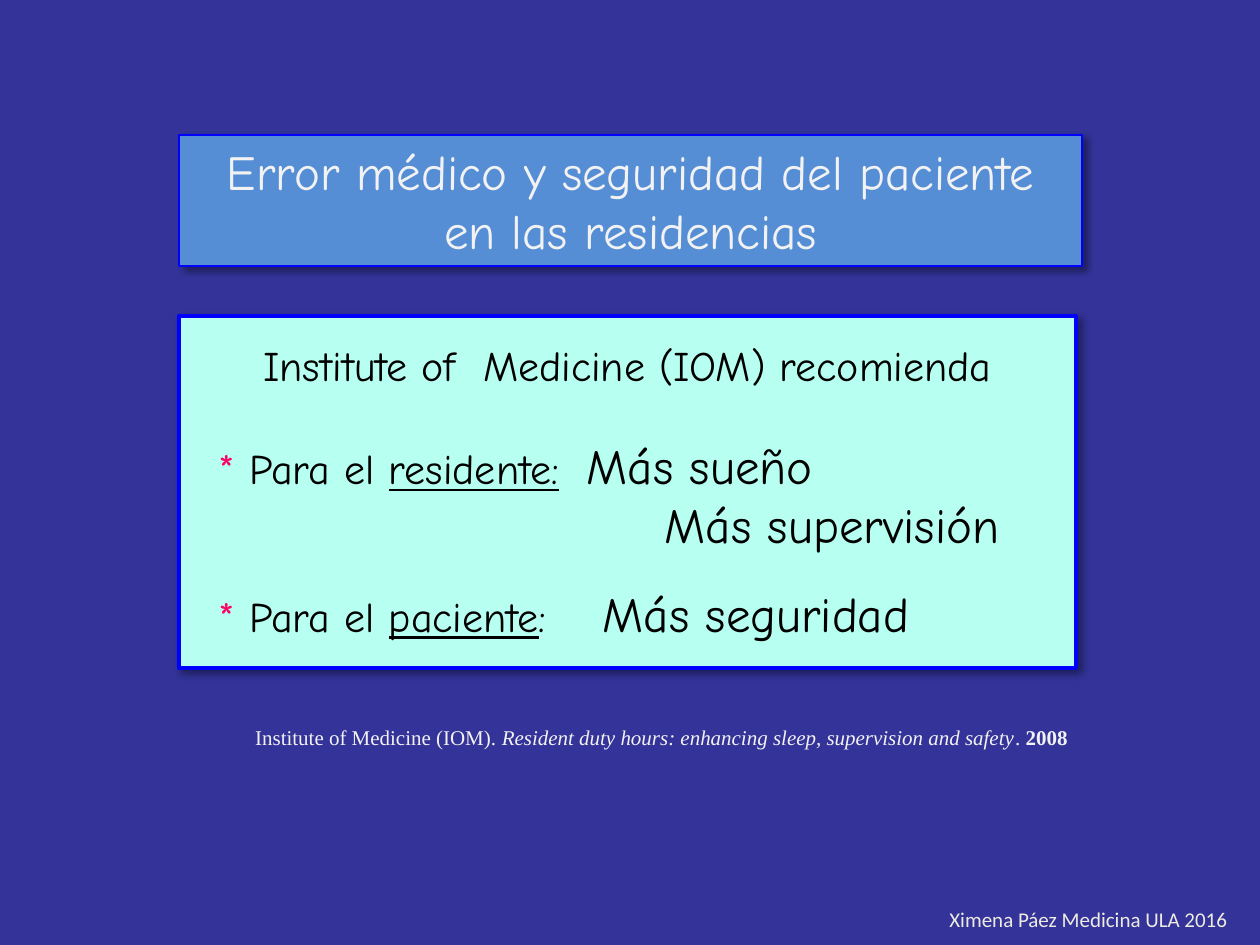
from dataclasses import dataclass

from lxml.etree import SubElement
from pptx import Presentation
from pptx.dml.color import RGBColor
from pptx.enum.shapes import MSO_SHAPE
from pptx.enum.text import MSO_ANCHOR, PP_ALIGN
from pptx.oxml.ns import qn
from pptx.util import Emu, Pt

EMU_PER_PX = 914400 / 126
COLORS = {
    "background": "333399",
    "banner": "558ED5",
    "panel": "B7FFF1",
    "border": "0000FF",
    "shadow": "000000",
    "ink": "000000",
    "star": "FF0066",
    "light": "F2F2F2",
    "credit": "EEECE1",
}
HAND, SERIF, SANS = "Comic Neue", "Times New Roman", "Calibri"


@dataclass(frozen=True)
class Box:
    left: int
    top: int
    width: int
    height: int


@dataclass(frozen=True)
class Span:
    text: str
    size: int = 24
    color: str = "ink"
    font: str = HAND
    bold: bool = False
    italic: bool = False
    underline: bool = False


@dataclass(frozen=True)
class Line:
    spans: tuple[Span, ...]
    align: PP_ALIGN = PP_ALIGN.LEFT
    space_before: int = 0
    indent: int = 0
    tab: int = 0


def px(length: int) -> Emu:
    return Emu(round(length * EMU_PER_PX))


def rgb(name: str) -> RGBColor:
    return RGBColor.from_string(COLORS[name])


def place(shape, box: Box) -> None:
    shape.left, shape.top = px(box.left), px(box.top)
    shape.width, shape.height = px(box.width), px(box.height)


def style_card(shape, fill: str, border_width: float) -> None:
    shape.fill.solid()
    shape.fill.fore_color.rgb = rgb(fill)
    shape.line.color.rgb = rgb("border")
    shape.line.width = Pt(border_width)
    shape.shadow.inherit = False
    effects = shape._element.spPr.find(qn("a:effectLst"))
    shadow = SubElement(
        effects, qn("a:outerShdw"), blurRad=str(Pt(4)), dist=str(Pt(3)),
        dir="2700000", algn="tl", rotWithShape="0",
    )
    shade = SubElement(shadow, qn("a:srgbClr"), val=COLORS["shadow"])
    SubElement(shade, qn("a:alpha"), val="40000")


def write_line(paragraph, line: Line) -> None:
    properties = paragraph._p.get_or_add_pPr()
    if line.indent:
        properties.set("marL", str(px(line.indent)))
    if line.tab:
        tabs = SubElement(properties, qn("a:tabLst"))
        SubElement(tabs, qn("a:tab"), pos=str(px(line.tab)), algn="l")
    paragraph.alignment = line.align
    if line.space_before:
        paragraph.space_before = Pt(line.space_before)
    for span in line.spans:
        run = paragraph.add_run()
        run.text = span.text
        run.font.name = span.font
        run.font.size = Pt(span.size)
        run.font.color.rgb = rgb(span.color)
        run.font.bold = span.bold
        run.font.italic = span.italic
        run.font.underline = span.underline


def write_lines(frame, lines: list[Line], wrap: bool = True) -> None:
    frame.word_wrap = wrap
    frame.vertical_anchor = MSO_ANCHOR.TOP
    for index, line in enumerate(lines):
        paragraph = frame.add_paragraph() if index else frame.paragraphs[0]
        write_line(paragraph, line)


def add_text(slide, box: Box, line: Line, wrap: bool = True) -> None:
    textbox = slide.shapes.add_textbox(0, 0, 0, 0)
    place(textbox, box)
    write_lines(textbox.text_frame, [line], wrap)


def add_title(slide) -> None:
    title = slide.shapes.title
    place(title, Box(179, 135, 903, 131))
    style_card(title, "banner", 0.75)
    write_lines(title.text_frame, [
        Line((Span(text, 28, "light"),), PP_ALIGN.CENTER)
        for text in ("Error médico y seguridad del paciente", "en las residencias")
    ])


def add_recommendations(slide) -> None:
    panel = slide.shapes.add_shape(MSO_SHAPE.RECTANGLE, 0, 0, 0, 0)
    place(panel, Box(179, 316, 897, 352))
    style_card(panel, "panel", 2.25)
    frame = panel.text_frame
    frame.margin_left = frame.margin_right = px(40)
    frame.margin_top = px(24)
    star, audience = Span("* ", color="star"), Span("Para el ")
    write_lines(frame, [
        Line((Span("Institute of  Medicine (IOM) recomienda"),), PP_ALIGN.CENTER),
        Line(
            (star, audience, Span("residente:", underline=True), Span("\tMás sueño", 28)),
            space_before=26, tab=368,
        ),
        Line((Span("Más supervisión", 28),), indent=446),
        Line(
            (star, audience, Span("paciente", underline=True), Span(":"),
             Span("\tMás seguridad", 28)),
            space_before=17, tab=384,
        ),
    ])


def main() -> None:
    presentation = Presentation()
    presentation.slide_width, presentation.slide_height = px(1260), px(945)
    slide = presentation.slides.add_slide(presentation.slide_layouts[5])
    slide.background.fill.solid()
    slide.background.fill.fore_color.rgb = rgb("background")

    add_recommendations(slide)
    add_text(slide, Box(227, 718, 853, 38), Line((
        Span("Institute of Medicine (IOM). ", 12, "light", SERIF),
        Span("Resident duty hours: enhancing sleep, supervision and safety",
             12, "light", SERIF, italic=True),
        Span(". ", 12, "light", SERIF),
        Span("2008", 12, "light", SERIF, bold=True),
    ), PP_ALIGN.RIGHT))
    add_title(slide)
    add_text(
        slide, Box(937, 900, 318, 38),
        Line((Span("Ximena Páez Medicina ULA 2016", 12, "credit", SANS),)), wrap=False,
    )
    presentation.save("out.pptx")


if __name__ == "__main__":
    main()
